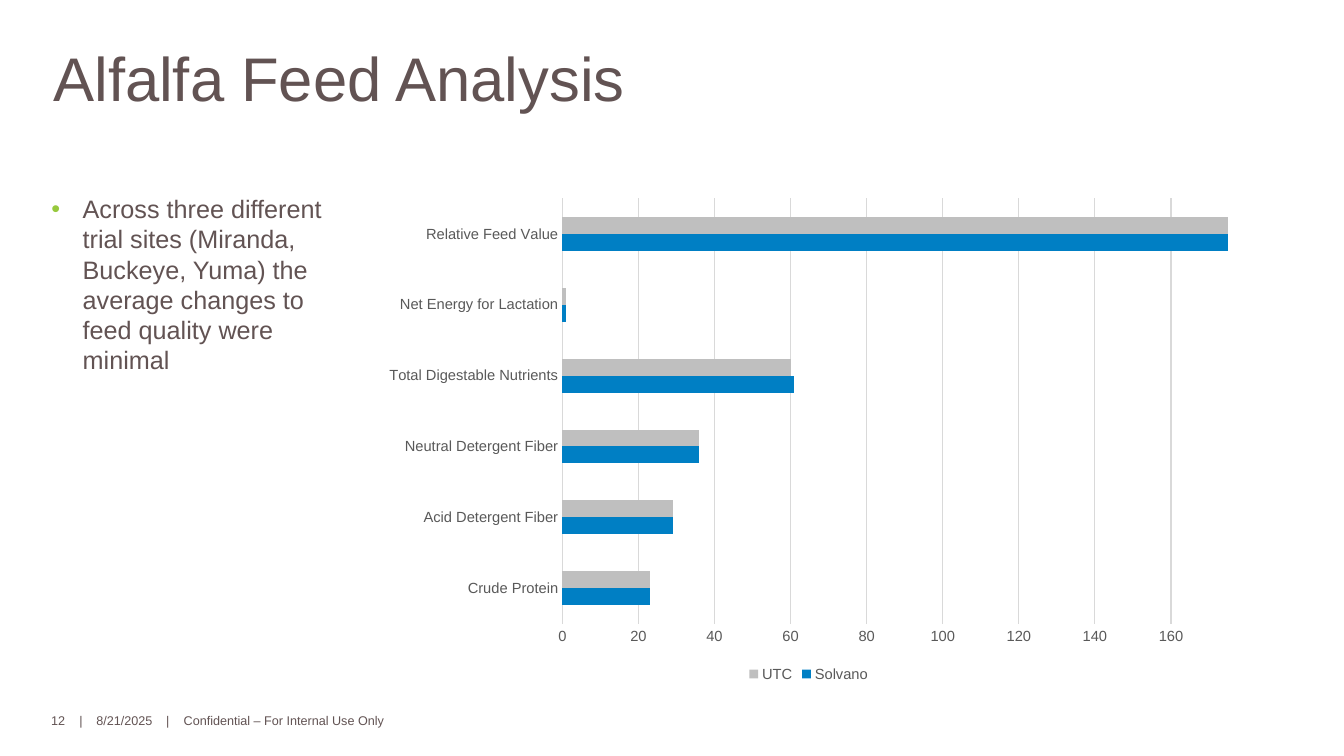
from lxml.etree import SubElement
from pptx import Presentation
from pptx.chart.data import CategoryChartData
from pptx.dml.color import RGBColor
from pptx.enum.chart import XL_CHART_TYPE, XL_LEGEND_POSITION, XL_TICK_MARK
from pptx.enum.text import MSO_ANCHOR, MSO_AUTO_SIZE, PP_ALIGN
from pptx.oxml.ns import qn
from pptx.util import Cm, Pt

BROWN = RGBColor(0x62, 0x53, 0x53)
GREEN = RGBColor(0x97, 0xC9, 0x3D)
BLUE = RGBColor(0x00, 0x7F, 0xC4)
SILVER = RGBColor(0xBF, 0xBF, 0xBF)
GRID_GRAY = RGBColor(0xD9, 0xD9, 0xD9)
LABEL_GRAY = RGBColor(0x59, 0x59, 0x59)

CATEGORIES = ["Crude Protein", "Acid Detergent Fiber", "Neutral Detergent Fiber",
              "Total Digestable Nutrients", "Net Energy for Lactation",
              "Relative Feed Value"]
SERIES = [("Solvano", BLUE, (23, 29, 36, 61, 1, 177)),
          ("UTC", SILVER, (23, 29, 36, 60, 1, 175))]


def set_values(target, values):
    for name, value in values.items():
        setattr(target, name, value)


class SlideBuilder:
    font_name = "Arial"

    def __init__(self, deck):
        self.slide = deck.slides.add_slide(deck.slide_layouts[1])

    def style_font(self, font, size, color):
        set_values(font, {"name": self.font_name, "size": Pt(size)})
        font.color.rgb = color

    def place(self, box, left, top, width, height):
        set_values(box, {"left": Cm(left), "top": Cm(top),
                         "width": Cm(width), "height": Cm(height)})

    def fill_text(self, box, text, size, line_spacing=None):
        frame = box.text_frame
        set_values(frame, {"word_wrap": True, "auto_size": MSO_AUTO_SIZE.NONE,
                           "vertical_anchor": MSO_ANCHOR.TOP})
        para = frame.paragraphs[0]
        set_values(para, {"alignment": PP_ALIGN.LEFT, "space_before": Pt(0),
                          "line_spacing": line_spacing})
        span = para.add_run()
        span.text = text
        self.style_font(span.font, size, BROWN)
        return para

    def title(self, text, *area):
        box = self.slide.shapes.title
        self.place(box, *area)
        self.fill_text(box, text, 44, Pt(41.8))

    def bullet(self, text, *area):
        box = self.slide.placeholders[1]
        self.place(box, *area)
        properties = self.fill_text(box, text, 18, Pt(21.6))._p.get_or_add_pPr()
        indent = Cm(0.79)
        properties.set("marL", str(indent))
        properties.set("indent", str(-indent))
        color = SubElement(properties, qn("a:buClr"))
        SubElement(color, qn("a:srgbClr"), val=str(GREEN))
        SubElement(properties, qn("a:buChar"), char="•")

    def footer(self, parts, stops, *area):
        """Put the parts on one line, each after the first at a tab stop."""
        box = self.slide.shapes.add_textbox(*map(Cm, area))
        properties = self.fill_text(box, "\t".join(parts), 9)._p.get_or_add_pPr()
        tabs = SubElement(properties, qn("a:tabLst"))
        for stop in stops:
            SubElement(tabs, qn("a:tab"), pos=str(Cm(stop)), algn="l")

    def bar_chart(self, categories, series, *area):
        data = CategoryChartData()
        data.categories = categories
        for name, _, values in series:
            data.add_series(name, values)
        chart = self.slide.shapes.add_chart(
            XL_CHART_TYPE.BAR_CLUSTERED, *map(Cm, area), data).chart
        set_values(chart, {"has_title": False, "has_legend": True})
        set_values(chart.legend, {"position": XL_LEGEND_POSITION.BOTTOM,
                                  "include_in_layout": False})
        plot = chart.plots[0]
        set_values(plot, {"gap_width": 219, "overlap": 0,
                          "vary_by_categories": False})
        for bars, (_, color, _) in zip(plot.series, series):
            bars.format.fill.solid()
            bars.format.fill.fore_color.rgb = color

        category_axis, value_axis = chart.category_axis, chart.value_axis
        set_values(value_axis, {"minimum_scale": 0, "maximum_scale": 175,
                                "major_unit": 20, "has_major_gridlines": True})
        value_axis.format.line.fill.background()
        for axis in (category_axis, value_axis):
            set_values(axis, {"major_tick_mark": XL_TICK_MARK.NONE,
                              "minor_tick_mark": XL_TICK_MARK.NONE})
        for line in (category_axis.format.line,
                     value_axis.major_gridlines.format.line):
            line.color.rgb = GRID_GRAY
            line.width = Pt(0.75)
        for font in (chart.font, chart.legend.font,
                     category_axis.tick_labels.font, value_axis.tick_labels.font):
            self.style_font(font, 10.5, LABEL_GRAY)


def main():
    deck = Presentation()
    set_values(deck, {"slide_width": Cm(33.87), "slide_height": Cm(19.05)})
    builder = SlideBuilder(deck)
    builder.footer(["12", "|", "8/21/2025", "|", "Confidential – For Internal Use Only"],
                   [0.71, 1.14, 2.9, 3.34], 1.04, 17.83, 11.86, 0.64)
    builder.title("Alfalfa Feed Analysis", 1.09, 1.27, 21.29, 3.48)
    builder.bullet("Across three different trial sites (Miranda, Buckeye, Yuma) "
                   "the average changes to feed quality were minimal",
                   1.04, 4.75, 7.95, 12.55)
    builder.bar_chart(CATEGORIES, SERIES, 9.37, 4.75, 22.02, 12.55)
    deck.save("out.pptx")


if __name__ == "__main__":
    main()
